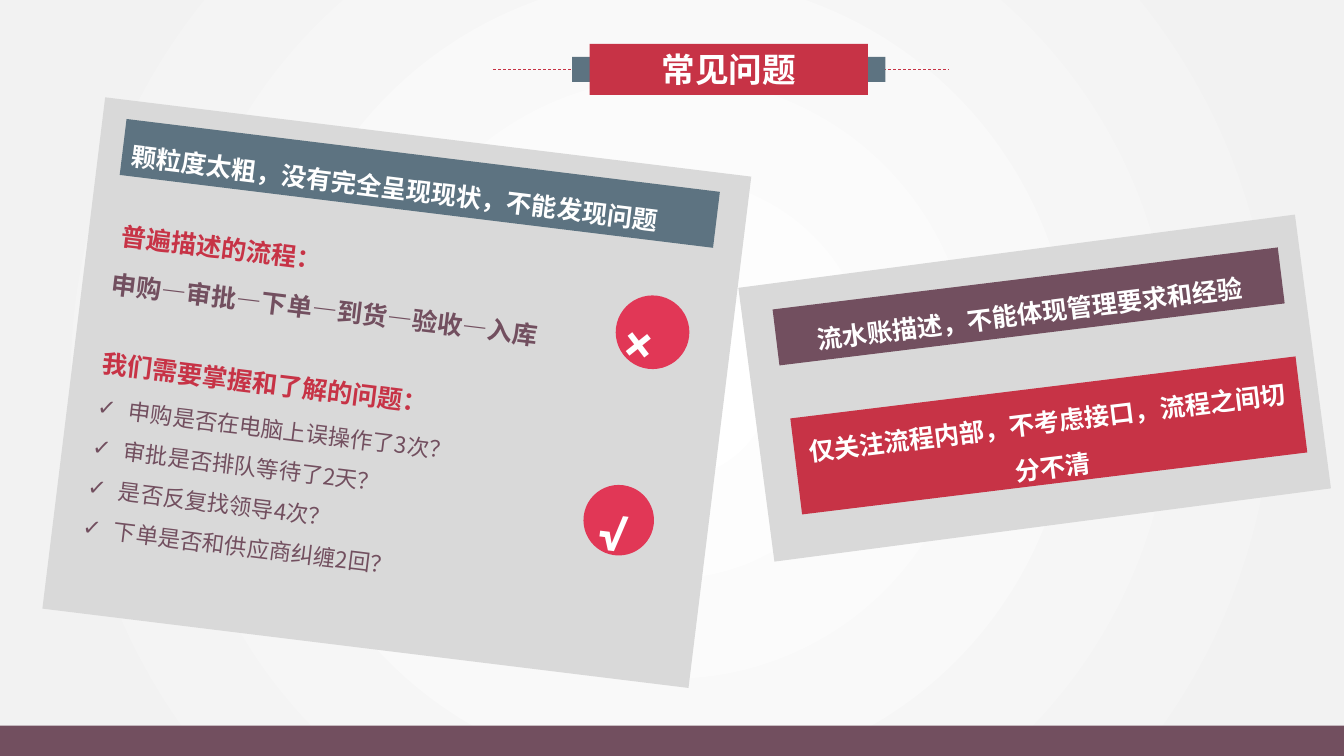
import math

import lxml.etree
import pptx
import pptx.dml.color
import pptx.enum.dml
import pptx.enum.shapes
import pptx.enum.text
import pptx.oxml.ns
import pptx.util

Pt = pptx.util.Pt
RGBColor = pptx.dml.color.RGBColor
SHAPE = pptx.enum.shapes.MSO_SHAPE
ANCHOR = pptx.enum.text.MSO_ANCHOR
ALIGN = pptx.enum.text.PP_ALIGN
AUTO_SIZE = pptx.enum.text.MSO_AUTO_SIZE
qn = pptx.oxml.ns.qn

WHITE = RGBColor(0xFF, 0xFF, 0xFF)
PALE = RGBColor(0xF2, 0xF2, 0xF2)
GRAY = RGBColor(0xD9, 0xD9, 0xD9)
PLUM = RGBColor(0x72, 0x4F, 0x5F)
SLATE = RGBColor(0x5D, 0x73, 0x81)
RED = RGBColor(0xC7, 0x33, 0x46)
ROSE = RGBColor(0xE1, 0x37, 0x56)

CHINESE_FONT = "Noto Sans CJK SC"
SYMBOL_FONT = "Roboto"
SLIDE_WIDTH, SLIDE_HEIGHT = 960, 540
TILT = 7


def within(panel, angle, left, top, width, height):
    """Turn a box given inside a tilted panel into slide coordinates."""
    panel_left, panel_top, panel_width, panel_height = panel
    across = left + width / 2 - panel_width / 2
    down = top + height / 2 - panel_height / 2
    cosine, sine = math.cos(math.radians(angle)), math.sin(math.radians(angle))
    center_x = panel_left + panel_width / 2 + across * cosine - down * sine
    center_y = panel_top + panel_height / 2 + across * sine + down * cosine
    return center_x - width / 2, center_y - height / 2, width, height


def place(shape, box, angle=0):
    shape.left, shape.top, shape.width, shape.height = map(Pt, box)
    shape.rotation = angle


def add_filled(slide, box, color, angle=0, kind=SHAPE.RECTANGLE):
    shape = slide.shapes.add_shape(kind, *map(Pt, box))
    shape.rotation = angle
    shape.shadow.inherit = False
    shape.fill.solid()
    shape.fill.fore_color.rgb = color
    shape.line.fill.background()
    return shape


def write(shape, text, size, color, bold=True, align=ALIGN.LEFT, anchor=ANCHOR.TOP,
          wrap=True, spacing=1.5, font=CHINESE_FONT,
          auto_size=AUTO_SIZE.SHAPE_TO_FIT_TEXT):
    frame = shape.text_frame
    frame.text = text
    frame.word_wrap = wrap
    frame.vertical_anchor = anchor
    frame.auto_size = auto_size
    for paragraph in frame.paragraphs:
        paragraph.alignment = align
        paragraph.line_spacing = spacing
        paragraph.space_before = Pt(0)
        for run in paragraph.runs:
            run.font.size = Pt(size)
            run.font.bold = bold
            run.font.color.rgb = color
            run.font.name = font
            latin = run.font._element.find(qn("a:latin"))
            latin.addnext(latin.makeelement(qn("a:ea"), {"typeface": font}))


def add_text(slide, box, angle, text, size, color, **style):
    text_box = slide.shapes.add_textbox(*map(Pt, box))
    text_box.rotation = angle
    write(text_box, text, size, color, **style)


def add_bar(slide, box, angle, text, color, **style):
    write(add_filled(slide, box, color, angle), text, 18, WHITE, **style)


def bring_to_front(slide, shape):
    slide.shapes.element.append(shape.element)


def paint_background(slide):
    fill = slide.background.fill
    fill.gradient()
    for stop, color, position in zip(fill.gradient_stops, (WHITE, PALE), (0, 0.91)):
        stop.color.rgb = color
        stop.position = position
    linear = next(slide.element.iter(qn("a:lin")))
    circle = linear.makeelement(qn("a:path"), {"path": "circle"})
    lxml.etree.SubElement(circle, qn("a:fillToRect"),
                          dict.fromkeys("ltrb", "50000"))
    linear.getparent().replace(linear, circle)


def add_badge(slide, panel, center, diameter, symbol, text_size):
    def centered(width, height, shift=0):
        return within(panel, TILT, center[0] - width / 2,
                      center[1] - height / 2 + shift, width, height)

    add_filled(slide, centered(diameter, diameter), ROSE, TILT, SHAPE.OVAL)
    add_text(slide, centered(*text_size, shift=-2), TILT, symbol, 36, WHITE,
             wrap=False, font=SYMBOL_FONT)


def add_checklist(slide, box, angle, items):
    body = slide.placeholders[1]
    bring_to_front(slide, body)
    place(body, box, angle)
    write(body, "\n".join(items), 16, PLUM, bold=False)
    for paragraph in body.text_frame.paragraphs:
        properties = paragraph._p.get_or_add_pPr()
        properties.set("marL", str(Pt(22.5)))
        properties.set("indent", str(Pt(-22.5)))
        lxml.etree.SubElement(properties, qn("a:buChar"), {"char": "✓"})


def add_granularity_panel(slide, panel):
    add_filled(slide, panel, GRAY, TILT)
    for left, top, width, height, text, color in (
            (14, 106.3, 339, 36, "申购—审批—下单—到货—验收—入库", PLUM),
            (16.5, 71.2, 162, 40.3, "普遍描述的流程：", RED),
            (14.4, 163.3, 250, 40.3, "我们需要掌握和了解的问题：", RED)):
        add_text(slide, within(panel, TILT, left, top, width, height), TILT,
                 text, 18, color)
    add_bar(slide, within(panel, TILT, 17, 13.5, 427, 40.3), TILT,
            "颗粒度太粗，没有完全呈现现状，不能发现问题", SLATE, anchor=ANCHOR.MIDDLE)
    add_checklist(slide, within(panel, TILT, 14.3, 197.6, 262, 124), TILT, (
        "申购是否在电脑上误操作了3次？",
        "审批是否排队等待了2天？",
        "是否反复找领导4次？",
        "下单是否和供应商纠缠2回？"))
    add_badge(slide, panel, (400.9, 255.1), 50.4, "√", (40.3, 73.4))
    add_badge(slide, panel, (408.5, 118.9), 52.6, "×", (51.1, 72.7))


def add_scope_panel(slide, panel):
    panel_tilt = -7.5
    add_filled(slide, panel, GRAY, panel_tilt)
    for left, top, height, text, color in (
            (22, 20.1, 40.3, "流水账描述，不能体现管理要求和经验", PLUM),
            (24.3, 98.9, 69.1, "仅关注流程内部，不考虑接口，流程之间切分不清", RED)):
        add_bar(slide, within(panel, panel_tilt, left, top, 363.6, height), -TILT,
                text, color, align=ALIGN.CENTER)


def add_title_banner(slide, box):
    left, top, width, height = box
    middle = top + height / 2
    line = slide.shapes.add_connector(
        pptx.enum.shapes.MSO_CONNECTOR.STRAIGHT,
        Pt(left - 69), Pt(middle), Pt(left + width + 57.5), Pt(middle))
    line.line.color.rgb = RED
    line.line.width = Pt(0.5)
    line.line.dash_style = pptx.enum.dml.MSO_LINE.DASH
    lxml.etree.SubElement(line.element.spPr, qn("a:effectLst"))

    tab = 18
    for tab_left in (left - 12.5, left + width - 5.5):
        add_filled(slide, (tab_left, middle - tab / 2, tab, tab), SLATE)

    title = slide.shapes.title
    bring_to_front(slide, title)
    place(title, box)
    title.fill.solid()
    title.fill.fore_color.rgb = RED
    write(title, "常见问题", 24, WHITE, align=ALIGN.CENTER, wrap=False, spacing=1,
          auto_size=AUTO_SIZE.NONE)


def main():
    presentation = pptx.Presentation()
    presentation.slide_width = Pt(SLIDE_WIDTH)
    presentation.slide_height = Pt(SLIDE_HEIGHT)
    slide = presentation.slides.add_slide(presentation.slide_layouts[1])
    paint_background(slide)
    add_granularity_panel(slide, (51, 96.5, 465, 368))
    add_scope_panel(slide, (538.6, 178.6, 401, 197.3))
    add_filled(slide, (0, 518.4, SLIDE_WIDTH, 21.6), PLUM)
    add_title_banner(slide, (421.2, 31.4, 198.7, 36.3))
    presentation.save("out.pptx")


if __name__ == "__main__":
    main()
